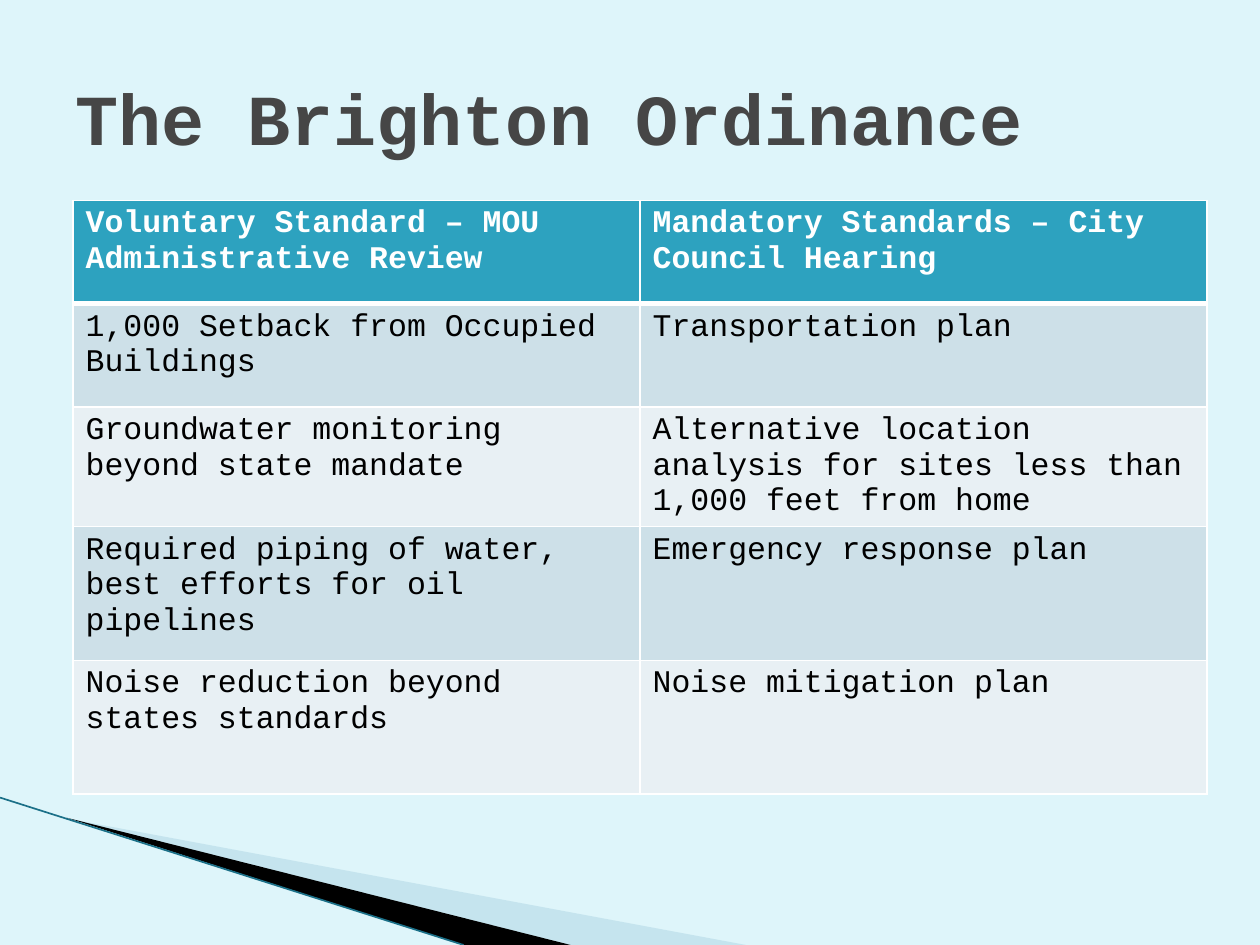
import pptx
import pptx.dml.color
import pptx.enum.shapes
import pptx.enum.text
import pptx.oxml
import pptx.oxml.ns
import pptx.util
from lxml import etree

RGB = pptx.dml.color.RGBColor
INCH = pptx.util.Inches
SKY = RGB(0xDE, 0xF5, 0xFA)
MIST = RGB(0xA0, 0xCB, 0xDC)
TEAL = RGB(0x1B, 0x70, 0x88)
GRAY = RGB(0x46, 0x46, 0x46)
BLUE = RGB(0x2D, 0xA2, 0xBF)
BANDS = (RGB(0xCD, 0xE0, 0xE8), RGB(0xE8, 0xF0, 0xF4))
BLACK = RGB(0, 0, 0)
WHITE = RGB(0xFF, 0xFF, 0xFF)
FONT = "Courier New"
WIDE, HIGH = 10, 7.5
UNITS = 100  # drawing units per inch

ROWS = [
    ("Voluntary Standard – MOU Administrative Review",
     "Mandatory Standards – City Council Hearing"),
    ("1,000 Setback from Occupied Buildings", "Transportation plan"),
    ("Groundwater monitoring beyond state mandate",
     "Alternative location analysis for sites less than 1,000 feet from home"),
    ("Required piping of water, best efforts for oil pipelines",
     "Emergency response plan"),
    ("Noise reduction beyond states standards", "Noise mitigation plan"),
]
TALL = (0.82, 0.82, 0.82, 1.06, 1.06)


def write(frame, text, size=18, color=BLACK, bold=False):
    para = frame.paragraphs[0]
    para.alignment = pptx.enum.text.PP_ALIGN.LEFT
    run = para.add_run()
    run.text = text
    font = run.font
    font.name, font.size, font.bold = FONT, pptx.util.Pt(size), bold
    font.color.rgb = color


def add_wedge(slide, points, color, alpha=None):
    start, *rest = [(round(x * UNITS), round(y * UNITS)) for x, y in points]
    pen = slide.shapes.build_freeform(*start, scale=INCH(1) / UNITS)
    pen.add_line_segments(rest, close=True)
    wedge = pen.convert_to_shape()
    wedge.shadow.inherit = False
    wedge.fill.solid()
    wedge.fill.fore_color.rgb = color
    wedge.line.fill.background()
    if alpha:
        tint = wedge._element.spPr.find(".//" + pptx.oxml.ns.qn("a:srgbClr"))
        etree.SubElement(tint, pptx.oxml.ns.qn("a:alpha"), val=str(alpha * 1000))


def add_line(slide, start, end, color, width):
    ends = [INCH(v) for v in (*start, *end)]
    line = slide.shapes.add_connector(
        pptx.enum.shapes.MSO_CONNECTOR.STRAIGHT, *ends)
    line.line.color.rgb = color
    line.line.width = pptx.util.Pt(width)
    etree.SubElement(line._element.spPr, pptx.oxml.ns.qn("a:effectLst"))


def add_edges(cell, low):
    props = cell._tc.get_or_add_tcPr()
    for side, width in (("L", 1), ("R", 1), ("T", 1), ("B", low)):
        props.append(pptx.oxml.parse_xml(
            f'<a:ln{side} {pptx.oxml.ns.nsdecls("a")} w="{width * 12700}">'
            f'<a:solidFill><a:srgbClr val="{WHITE}"/></a:solidFill></a:ln{side}>'))


def add_grid(slide, left, top, width):
    table = slide.shapes.add_table(
        len(ROWS), 2, INCH(left), INCH(top), INCH(width), INCH(sum(TALL))).table
    for r, texts in enumerate(ROWS):
        table.rows[r].height = INCH(TALL[r])
        head = r == 0
        for c, text in enumerate(texts):
            cell = table.cell(r, c)
            # The header has a heavy rule below it
            add_edges(cell, 3 if head else 1)
            cell.fill.solid()
            cell.fill.fore_color.rgb = BLUE if head else BANDS[(r - 1) % 2]
            write(cell.text_frame, text, color=WHITE if head else BLACK, bold=head)


def set_title(slide, text):
    title = slide.shapes.title
    title.left, title.top = INCH(WIDE * 0.05), INCH(HIGH * 0.04)
    title.width, title.height = INCH(WIDE * 0.9), INCH(1.25)
    frame = title.text_frame
    frame.auto_size = pptx.enum.text.MSO_AUTO_SIZE.NONE
    frame.vertical_anchor = pptx.enum.text.MSO_ANCHOR.MIDDLE
    write(frame, text, size=41, color=GRAY, bold=True)


def main():
    deck = pptx.Presentation()
    deck.slide_width, deck.slide_height = INCH(WIDE), INCH(HIGH)
    slide = deck.slides.add_slide(deck.slide_layouts[5])
    slide.background.fill.solid()
    slide.background.fill.fore_color.rgb = SKY

    # Corner wedges and their edge line
    add_wedge(slide, [(0.55, 6.5), (5.92, HIGH), (4.53, HIGH)], MIST, alpha=40)
    add_wedge(slide, [(0.53, 6.49), (4.53, HIGH), (3.68, HIGH)], BLACK)
    add_line(slide, (0, 6.33), (3.68, HIGH), TEAL, 0.95)

    # Title and table
    set_title(slide, "The Brighton Ordinance")
    add_grid(slide, 0.58, 1.59, WIDE * 0.9)
    deck.save("out.pptx")


if __name__ == "__main__":
    main()
